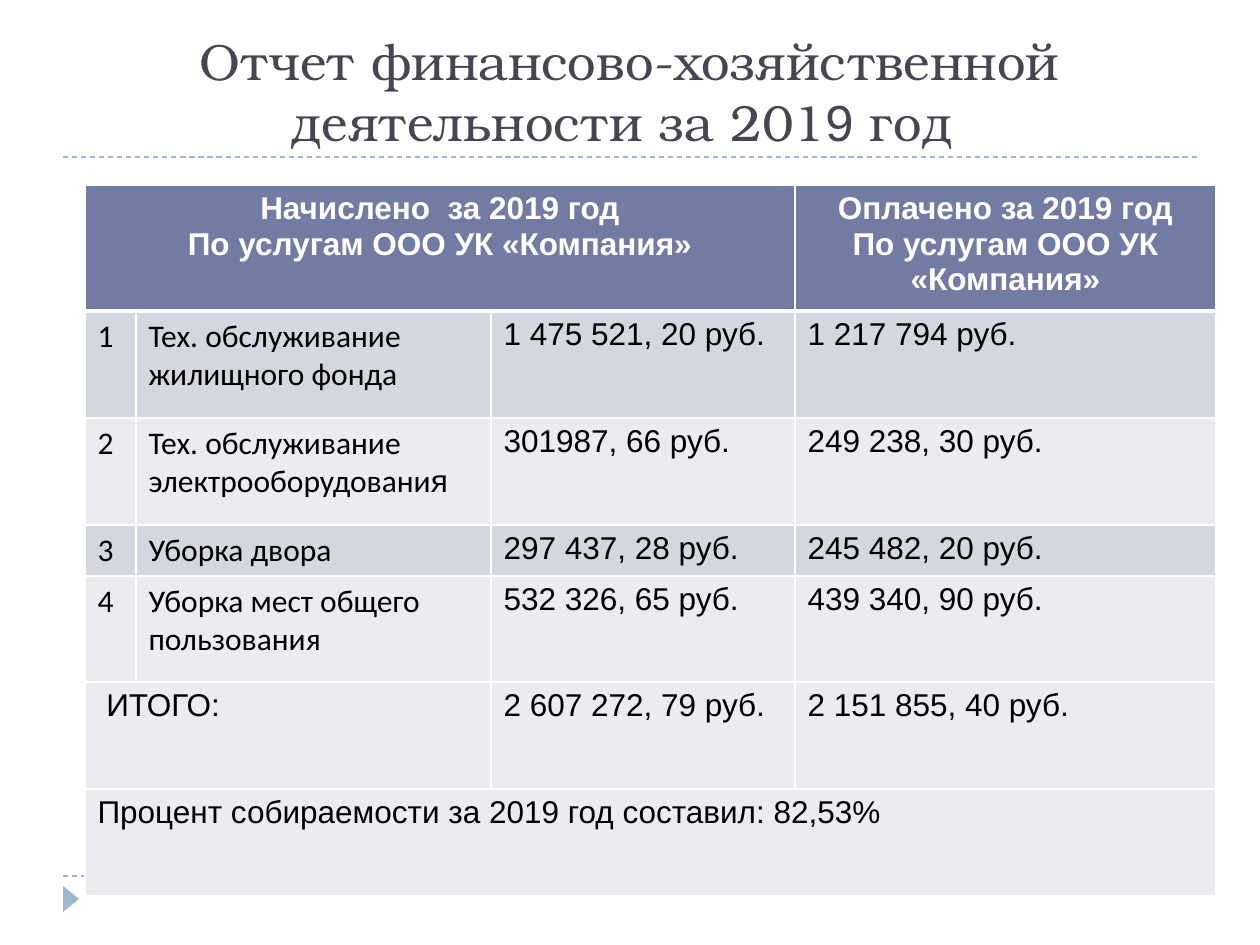
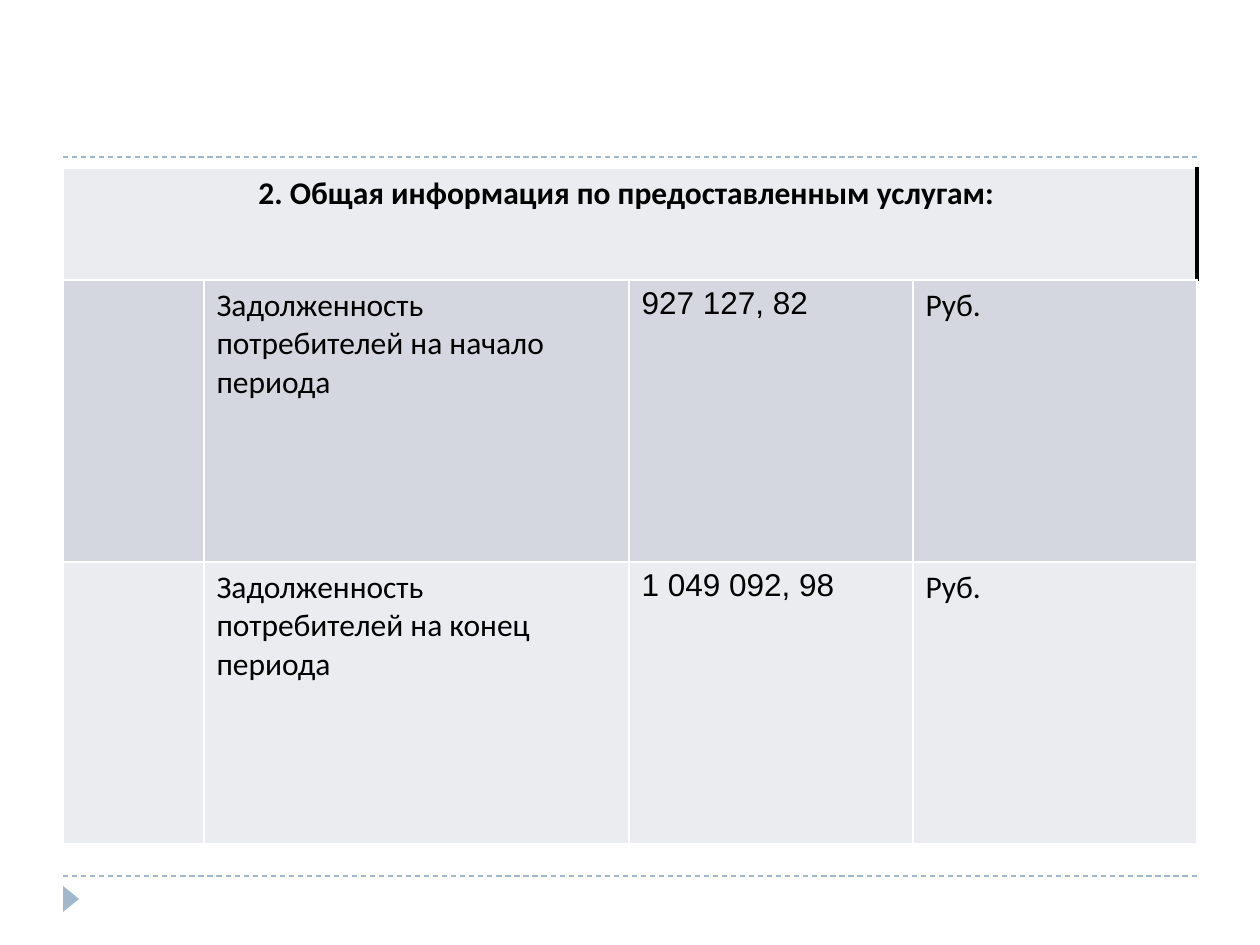
from itertools import cycle
from lxml.etree import SubElement
from pptx import Presentation
from pptx.dml.color import RGBColor
from pptx.enum.dml import MSO_LINE
from pptx.enum.shapes import MSO_CONNECTOR, MSO_SHAPE
from pptx.enum.text import MSO_ANCHOR, PP_ALIGN
from pptx.oxml.ns import qn
from pptx.util import Emu, Pt

# Colours and fonts
WHITE = RGBColor(0xFF, 0xFF, 0xFF)
BLACK = RGBColor(0, 0, 0)
SLATE = RGBColor(0x46, 0x46, 0x53)
HEAD = RGBColor(0x72, 0x7C, 0xA3)
DARK = RGBColor(0xD5, 0xD7, 0xE0)
LIGHT = RGBColor(0xEB, 0xEC, 0xF0)
BLUE = RGBColor(0x9F, 0xB8, 0xCD)
SERIF, SANS, BODY = "TeX Gyre Bonum", "Arial", "Calibri"

# Shared frame
LEFT, WIDE, TALL = 63, 1134, 945
RULES = (876, 157)
THIN, THICK = 1, 3


def px(num):
    return Emu(round(num * 914400 / 126))


def write(para, text, fonts, size, color, bold=False):
    """Fill a paragraph; each | in the text moves on to the next font."""
    for part, font in zip(text.split("|"), cycle(fonts)):
        run = para.add_run()
        run.text = part
        run.font.name = font
        run.font.size = Pt(size)
        run.font.bold = bold
        run.font.color.rgb = color


def add_rule(slide, top):
    line = slide.shapes.add_connector(
        MSO_CONNECTOR.STRAIGHT, px(LEFT), px(top), px(LEFT + WIDE), px(top))
    line.line.color.rgb = BLUE
    line.line.width = Pt(0.75)
    line.line.dash_style = MSO_LINE.DASH
    SubElement(line._element.spPr, qn("a:effectLst"))


def add_mark(slide):
    mark = slide.shapes.add_shape(
        MSO_SHAPE.ISOSCELES_TRIANGLE, px(58), px(891), px(26), px(16))
    mark.rotation = 90
    mark.shadow.inherit = False
    mark.fill.solid()
    mark.fill.fore_color.rgb = BLUE
    mark.line.fill.background()


def add_page(deck):
    slide = deck.slides.add_slide(deck.slide_layouts[6])
    for top in RULES:
        add_rule(slide, top)
    add_mark(slide)
    return slide


def add_title(slide, text):
    box = slide.shapes.add_textbox(px(LEFT), px(32), px(WIDE), px(126))
    frame = box.text_frame
    frame.word_wrap = True
    frame.vertical_anchor = MSO_ANCHOR.BOTTOM
    para = frame.paragraphs[0]
    para.alignment = PP_ALIGN.CENTER
    write(para, text, (SERIF, SANS), 29, SLATE)


def set_edge(cell, side, color=WHITE, width=THIN):
    props = cell._tc.get_or_add_tcPr()
    edge = props.find(qn("a:ln" + side))
    if edge is None:
        edge = SubElement(props, qn("a:ln" + side))
        props.insert("LRTB".index(side), edge)
    for child in list(edge):
        edge.remove(child)
    edge.set("w", str(Pt(width)))
    fill = SubElement(edge, qn("a:solidFill"))
    SubElement(fill, qn("a:srgbClr")).set("val", str(color))


def add_grid(slide, left, top, cols, rows, fills, spans):
    """Make an empty table; a span is (row, first column, last column)."""
    grid = slide.shapes.add_table(
        len(rows), len(cols), px(left), px(top),
        px(sum(cols)), px(sum(rows))).table
    grid.first_row = grid.horz_banding = False
    for col, width in zip(grid.columns, cols):
        col.width = px(width)
    for row, height, color in zip(grid.rows, rows, fills):
        row.height = px(height)
        for cell in row.cells:
            cell.fill.solid()
            cell.fill.fore_color.rgb = color
            for side in "LRTB":
                set_edge(cell, side)
    for row, first, last in spans:
        grid.cell(row, first).merge(grid.cell(row, last))
    return grid


def fill_row(grid, row, texts, fonts, color=BLACK, head=False):
    """Write a row of cells; None leaves a cell empty."""
    for col, (text, pair) in enumerate(zip(texts, fonts)):
        if text is None:
            continue
        frame = grid.cell(row, col).text_frame
        for num, line in enumerate(text.split("\n")):
            para = frame.add_paragraph() if num else frame.paragraphs[0]
            if head:
                para.alignment = PP_ALIGN.CENTER
            write(para, line, pair, 18, color, head)


def add_report(slide):
    firm = "По услугам ООО УК «Компания»"
    items = [
        ("1", "Тех. обслуживание жилищного фонда",
         "1 475 521, 20 руб.", "1 217 794 руб."),
        ("2", "Тех. обслуживание электрооборудовани|я",
         "301987, 66 руб.", "249 238, 30 руб."),
        ("3", "Уборка двора", "297 437, 28 руб.", "245 482, 20 руб."),
        ("4", "Уборка мест общего пользования",
         "532 326, 65 руб.", "439 340, 90 руб."),
    ]
    sums = [
        (" ИТОГО:", None, "2 607 272, 79 руб.", "2 151 855, 40 руб."),
        ("Процент собираемости за 2019 год составил: 82,53%",),
    ]
    grid = add_grid(
        slide, 85, 185, (51, 355, 304, 421),
        (118, 107, 107, 51, 106, 107, 107),
        (HEAD, DARK, LIGHT, DARK, LIGHT, LIGHT, LIGHT),
        ((0, 0, 2), (5, 0, 1), (6, 0, 3)))
    plain = [(SANS,)] * 4
    mixed = [(BODY, SANS)] * 2 + [(SANS,)] * 2
    heads = ("Начислено  за 2019 год\n" + firm, None, None,
             "Оплачено за 2019 год\n" + firm)
    fill_row(grid, 0, heads, plain, WHITE, head=True)
    for row, texts in enumerate(items, 1):
        fill_row(grid, row, texts, mixed)
    for row, texts in enumerate(sums, 1 + len(items)):
        fill_row(grid, row, texts, plain)
    # Heavy edge under the heading
    for col in range(4):
        set_edge(grid.cell(0, col), "B", width=THICK)
        set_edge(grid.cell(1, col), "T", width=THICK)


def add_debts(slide):
    grid = add_grid(
        slide, LEFT, 168, (141, 425, 284, 284), (112, 282, 282),
        (LIGHT, DARK, LIGHT), ((0, 0, 3),))
    fonts = [(BODY,), (BODY,), (SANS,), (BODY,)]
    fill_row(grid, 0, ("2. Общая информация по предоставленным услугам: ",),
             fonts, head=True)
    debts = (("начало", "927 127, 82"), ("конец", "1 049 092, 98"))
    for row, (time, debt) in enumerate(debts, 1):
        name = f"Задолженность потребителей на {time} периода"
        fill_row(grid, row, (None, name, debt, "Руб."), fonts)
    # Black edge at the right of the heading
    for col in (0, 3):
        set_edge(grid.cell(0, col), "R", BLACK, 2.25)


def main():
    deck = Presentation()
    deck.slide_width, deck.slide_height = px(1260), px(TALL)

    # Slide 1: yearly report
    page = add_page(deck)
    add_title(page, "Отчет финансово-хозяйственной деятельности за 201|9| год ")
    add_report(page)

    # Slide 2: debts
    add_debts(add_page(deck))

    deck.save("out.pptx")


if __name__ == "__main__":
    main()
